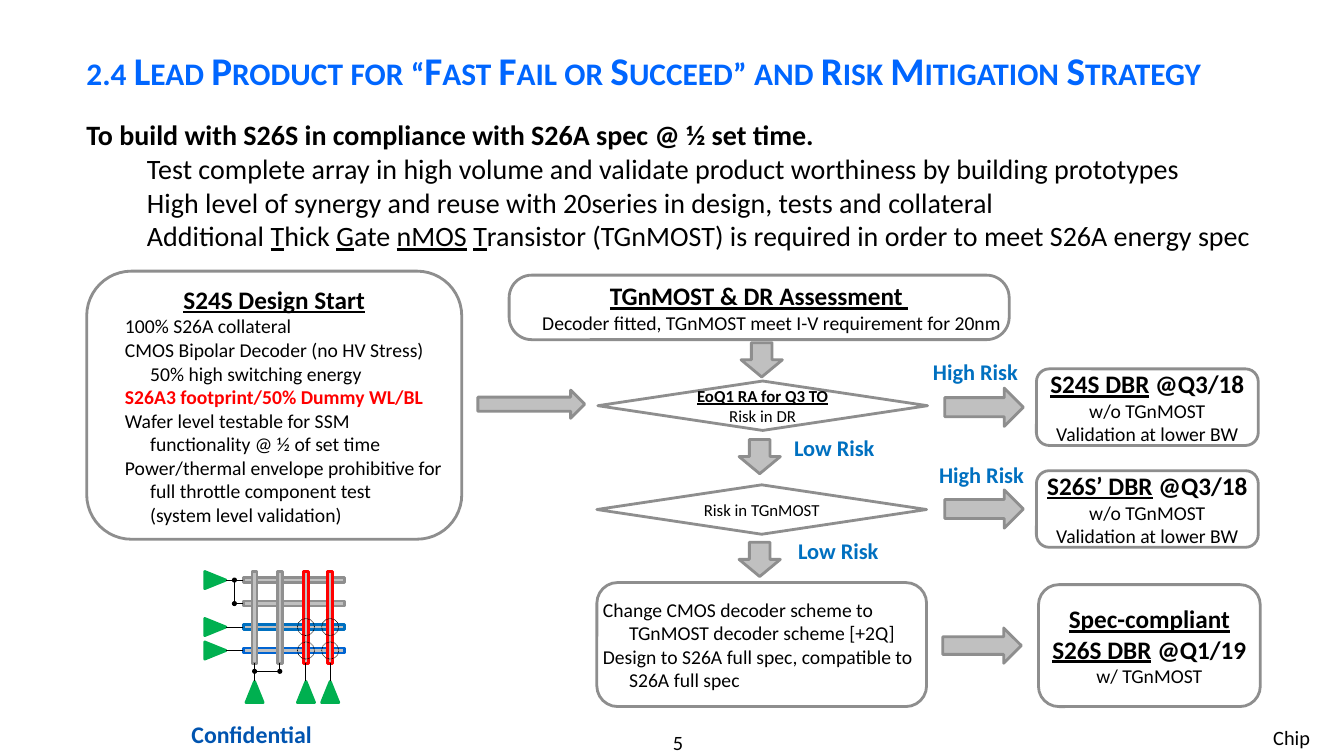
import pptx
import pptx.util
import pptx.dml.color
import pptx.enum.dml
import pptx.enum.shapes
import pptx.enum.text
import lxml.etree

COLORS = {
    "ink": "000000", "title": "0066FF", "footer": "0054B0", "risk": "0070C0",
    "alert": "FF0000", "edge": "8E8E8E", "arrow": "C0C0C0", "driver": "00B050",
    "grey line": "909090", "blue line": "0064D2",
}
KIND = pptx.enum.shapes.MSO_SHAPE
ALIGN = pptx.enum.text.PP_ALIGN
ANCHOR = pptx.enum.text.MSO_ANCHOR
RGB = pptx.dml.color.RGBColor.from_string

deck = pptx.Presentation()
deck.slide_width = pptx.util.Inches(13.33)
deck.slide_height = pptx.util.Inches(7.5)
COLUMN = deck.slide_width / 133.3
ROW = deck.slide_height / 75
slide = deck.slides.add_slide(deck.slide_layouts[6])
shapes = slide.shapes


def write(box, text, size=14, color="ink", bold=False, caps=False, align=ALIGN.LEFT,
          margin=0, first=0, spacing=None, underline_mark="_"):
    paragraph = box.text_frame.paragraphs[0]
    if paragraph.runs:
        paragraph = box.text_frame.add_paragraph()
    paragraph.alignment = align
    properties = paragraph._p.get_or_add_pPr()
    properties.set("marL", str(round(margin * COLUMN)))
    properties.set("indent", str(round(first * COLUMN)))
    if spacing:
        paragraph.line_spacing = spacing
    for part, words in enumerate(text.split(underline_mark)):
        for number, line in enumerate(words.split("\n")):
            if number:
                paragraph.add_line_break()
            if not line:
                continue
            run = paragraph.add_run()
            run.text = line
            run.font.name = "Calibri"
            run.font.size = pptx.util.Pt(size)
            run.font.bold = bold
            run.font.underline = part % 2 == 1
            run.font.color.rgb = RGB(COLORS[color])
            if caps:
                run._r.get_or_add_rPr().set("cap", "small")


def draw(kind, left, top, width, height, fill=None, edge="edge", weight=2):
    shape = shapes.add_shape(kind, round(left * COLUMN), round(top * ROW),
                             round(width * COLUMN), round(height * ROW))
    shape.shadow.inherit = False
    if fill:
        shape.fill.solid()
        shape.fill.fore_color.rgb = RGB(COLORS[fill])
    else:
        shape.fill.background()
    if edge:
        shape.line.color.rgb = RGB(COLORS[edge])
        shape.line.width = pptx.util.Pt(weight)
    else:
        shape.line.fill.background()
    return shape


center = {"align": ALIGN.CENTER}
risk = dict(size=16, color="risk", bold=True, **center)
point = {"size": 20, "margin": 12.1, "first": -6.1}
labels = [
    (55.6, 72.4, 23.3, 2.4, 0, 0, [("5", dict(size=14.5, **center))]),
    (125.3, 71.5, 7, 3.5, 1, 0.5, [("Chip", {"size": 14.5})]),
    (15.5, 70.8, 18.9, 4.1, 1.2, 0.6,
     [("Confidential", dict(size=17, color="footer", bold=True, **center))]),
    (7.6, 2.1, 120.7, 9.2, 1, 0.5,
     [("2.4 Lead Product for “Fast Fail or Succeed” and Risk Mitigation Strategy",
       {"size": 28, "color": "title", "bold": True, "caps": True, "spacing": 1.1})]),
    (7.6, 11.2, 119.3, 16.8, 1, 0.5, [
        ("To build with S26S in compliance with S26A spec @ ½ set time.",
         {"size": 20, "bold": True}),
        ("Test complete array in high volume and validate product worthiness "
         "by building prototypes", point),
        ("High level of synergy and reuse with 20series in design, tests and collateral",
         point),
        ("Additional _T_hick _G_ate _nMOS_ _T_ransistor (TGnMOST) is required "
         "in order to meet S26A energy spec", point)]),
    (91.4, 35, 10.7, 3.8, 1, 0.5, [("High Risk", risk)]),
    (92, 45.3, 10.7, 3.8, 1, 0.5, [("High Risk", risk)]),
    (77.4, 42.6, 10.7, 3.8, 1, 0.5, [("Low Risk", risk)]),
    (77.8, 52.8, 10.7, 3.8, 1, 0.5, [("Low Risk", risk)]),
]
for left, top, width, height, side, edge, lines in labels:
    label = shapes.add_textbox(round(left * COLUMN), round(top * ROW),
                               round(width * COLUMN), round(height * ROW))
    frame = label.text_frame
    frame.word_wrap = True
    frame.margin_left = frame.margin_right = round(side * COLUMN)
    frame.margin_top = frame.margin_bottom = round(edge * ROW)
    if lines[0][1].get("caps"):
        frame.vertical_anchor = ANCHOR.MIDDLE
    for text, style in lines:
        write(label, text, **style)

heading = dict(size=18, bold=True, **center)
item = {"margin": 5, "first": -2.5}
change = {"margin": 2.6, "first": -2.6}
lower_limits = [("w/o TGnMOST", center), ("Validation at lower BW", center)]
steps = [
    (KIND.ROUNDED_RECTANGLE, 8.6, 26.9, 37.2, 26.6, [
        ("_S24S Design Start_", heading),
        ("100% S26A collateral", item),
        ("CMOS Bipolar Decoder (no HV Stress)\n50% high switching energy", item),
        ("S26A3 footprint/50% Dummy WL/BL", dict(item, color="alert", bold=True)),
        ("Wafer level testable for SSM functionality @ ½ of set time", item),
        ("Power/thermal envelope prohibitive for full throttle component test\n"
         "(system level validation)", item)]),
    (KIND.ROUNDED_RECTANGLE, 50.5, 27.3, 49.6, 6.4, [
        ("_TGnMOST & DR Assessment _", heading),
        ("Decoder fitted, TGnMOST meet I-V requirement for 20nm", dict(item, **center))]),
    (KIND.ROUNDED_RECTANGLE, 59.2, 57.8, 32.7, 12.3, [
        ("Change CMOS decoder scheme to TGnMOST decoder scheme [+2Q]", change),
        ("Design to S26A full spec, compatible to S26A full spec", change)]),
    (KIND.DIAMOND, 59.3, 37.8, 32.7, 4.9, [
        ("_EoQ1 RA for Q3 TO_", dict(size=12, bold=True, **center)),
        ("Risk in DR", dict(size=12, **center))]),
    (KIND.DIAMOND, 59.2, 48.1, 32.7, 4.9,
     [("Risk in TGnMOST", dict(size=12, **center))]),
    (KIND.ROUNDED_RECTANGLE, 102.8, 36.6, 22, 7.6,
     [("_S24S DBR_ @Q3/18", heading)] + lower_limits),
    (KIND.ROUNDED_RECTANGLE, 102.8, 46.7, 22, 7.6,
     [("_S26S’ DBR_ @Q3/18", heading)] + lower_limits),
    (KIND.ROUNDED_RECTANGLE, 103, 58, 22, 12.1,
     [("_Spec-compliant S26S DBR_ @Q1/19", heading), ("w/ TGnMOST", center)]),
]
for kind, left, top, width, height, lines in steps:
    step = draw(kind, left, top, width, height)
    if height == 6.4:
        step.adjustments[0] = 0.35
    frame = step.text_frame
    frame.word_wrap = True
    frame.vertical_anchor = ANCHOR.MIDDLE
    if kind == KIND.ROUNDED_RECTANGLE:
        frame.margin_left = frame.margin_right = frame.margin_top = frame.margin_bottom = 0
    for text, style in lines:
        write(step, text, **style)

for left, top in [(73.5, 34), (73.3, 43.6), (73.3, 53.8)]:
    draw(KIND.DOWN_ARROW, left, top, 4.1, 3.4, "arrow")
for left, top, width, height in [(47.4, 38.7, 10.6, 2.8), (93.7, 38.5, 7.8, 3.8),
                                 (93.7, 48.6, 7.8, 3.8), (93.5, 62.3, 7.8, 3.5)]:
    draw(KIND.RIGHT_ARROW, left, top, width, height, "arrow")

BAR = 0.5
row_centers = [57.55 + 2.33 * number for number in range(4)]
column_centers = [25.25, 27.75, 30.35, 32.75]
row_bars = [draw(KIND.RECTANGLE, 24.15, y - BAR / 2, 10, BAR, "arrow", edge)
            for y, edge in zip(row_centers, ["edge", "grey line", "risk", "blue line"])]
column_bars = [draw(KIND.RECTANGLE, x - BAR / 2, 56.7, BAR, 9.1, "arrow", edge)
               for x, edge in zip(column_centers, ["edge", "grey line", "alert", "alert"])]

leads = []
for number, (y, x) in enumerate(zip(row_centers, column_centers)):
    driven = number != 1
    leads.append((22.4 if driven else 23.2, y, 24.15, y, row_bars[number], 1))
    leads.append((x, 67.6 if driven else 66.6, x, 65.8, column_bars[number], 2))
    if driven:
        row_driver = draw(KIND.ISOSCELES_TRIANGLE, 20.5, y - 1.05, 1.7, 2.1,
                          "driver", "driver")
        row_driver.rotation = 90
        draw(KIND.ISOSCELES_TRIANGLE, x - 0.85, 67.6, 1.7, 2.1, "driver", "driver")
leads.append((23.25, row_centers[1], 23.25, row_centers[0], None, 0))
leads.append((column_centers[0], 66.6, column_centers[1], 66.6, None, 0))
for x1, y1, x2, y2, bar, side in leads:
    lead = shapes.add_connector(pptx.enum.shapes.MSO_CONNECTOR.STRAIGHT,
                                round(x1 * COLUMN), round(y1 * ROW),
                                round(x2 * COLUMN), round(y2 * ROW))
    if bar is not None:
        lead.end_connect(bar, side)
    lead.line.color.rgb = RGB(COLORS["ink"])
    lead.line.width = pptx.util.Pt(0.75)
    lxml.etree.SubElement(lead._element.spPr, pptx.oxml.ns.qn("a:effectLst"))

for x, y in [(23.25, row_centers[0]), (23.25, row_centers[1]),
             (column_centers[0], 66.6), (column_centers[1], 66.6)]:
    draw(KIND.OVAL, x - 0.25, y - 0.25, 0.5, 0.5, "ink", None)
for x in column_centers[2:]:
    for y in row_centers[2:]:
        cell = draw(KIND.OVAL, x - 0.85, y - 0.85, 1.7, 1.7, None, "ink", 0.5)
        cell.line.dash_style = pptx.enum.dml.MSO_LINE.ROUND_DOT

deck.save("out.pptx")
